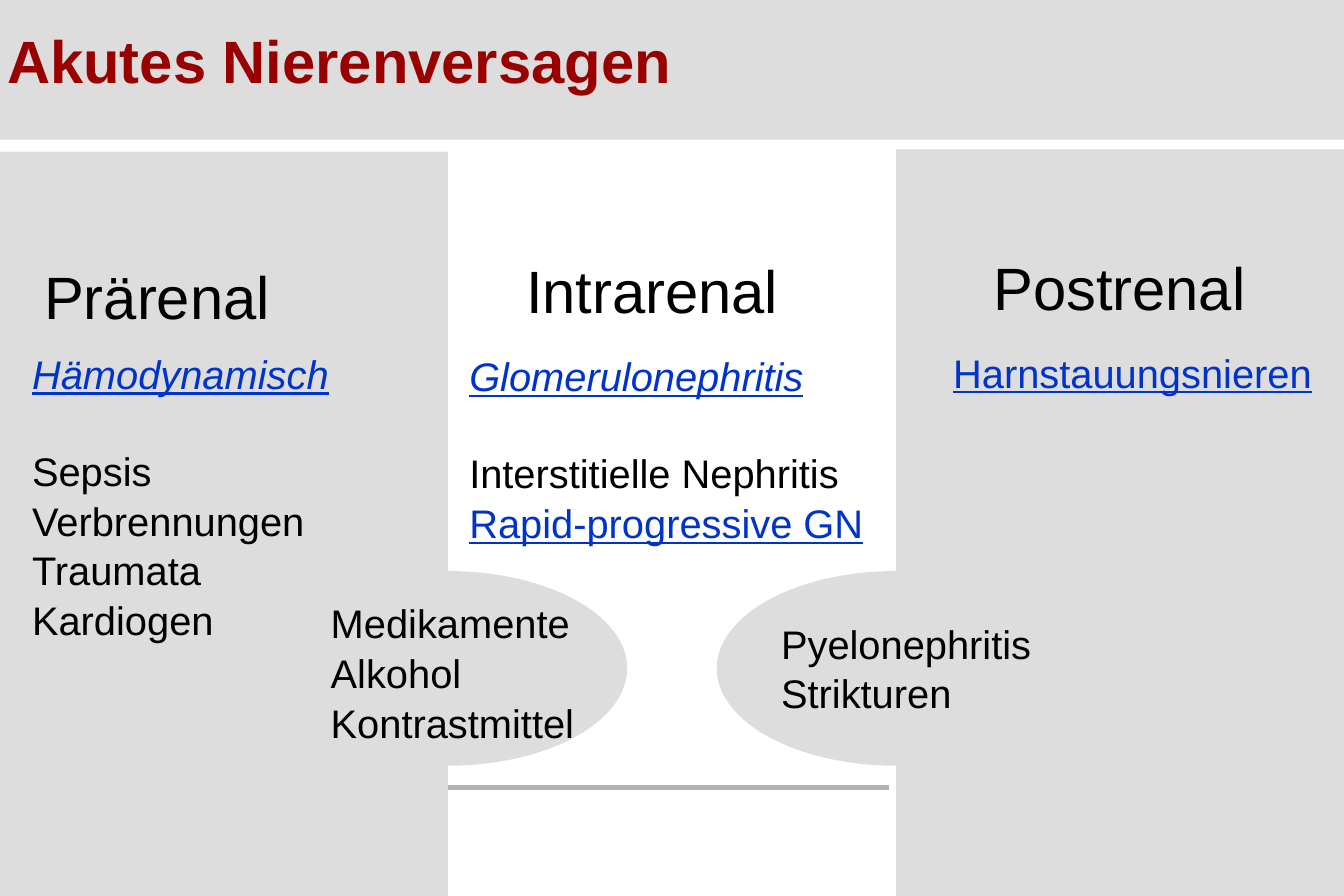
from pptx import Presentation
from pptx.dml.color import RGBColor
from pptx.enum import shapes, text
from pptx.oxml.ns import qn
from pptx.util import Inches, Pt

GREY = RGBColor(0xDD, 0xDD, 0xDD)
RULE_GREY = RGBColor(0xB2, 0xB2, 0xB2)
RED = RGBColor(0x99, 0x00, 0x00)
BLUE = RGBColor(0x00, 0x33, 0xCC)
BLACK = RGBColor(0x00, 0x00, 0x00)
FONT = "Arial"
LINE_SPACING = 1.04
BLANK_LINE = 28.7

LINK = dict(color=BLUE, underline=True)
GAP = dict(space_before=BLANK_LINE)


def format_text(paragraph, wording, size=24, color=BLACK, bold=False, italic=False,
                underline=False, align=text.PP_ALIGN.LEFT, space_before=0):
    paragraph.text = wording
    paragraph.alignment = align
    paragraph.line_spacing = LINE_SPACING
    paragraph.space_before = Pt(space_before)
    font = paragraph.runs[0].font
    font.name, font.size, font.color.rgb = FONT, Pt(size), color
    font.bold, font.italic, font.underline = bold, italic, underline


class SlideBuilder:
    def __init__(self, presentation):
        self.slide = presentation.slides.add_slide(presentation.slide_layouts[5])
        self.shapes = self.slide.shapes

    def area(self, kind, left, top, width, height):
        shape = self.shapes.add_shape(kind, Inches(left), Inches(top),
                                      Inches(width), Inches(height))
        shape.shadow.inherit = False
        shape.fill.solid()
        shape.fill.fore_color.rgb = GREY
        shape.line.fill.background()

    def rule(self, left, right, y):
        line = self.shapes.add_connector(shapes.MSO_CONNECTOR.STRAIGHT, Inches(left),
                                         Inches(y), Inches(right), Inches(y))
        line.line.color.rgb = RULE_GREY
        line.line.width = Pt(3)
        properties = line._element.spPr
        properties.append(properties.makeelement(qn("a:effectLst"), {}))

    def title(self, wording):
        """Fill the title placeholder and bring it in front of the header band."""
        title = self.shapes.title
        title.left, title.top = Inches(-0.04), Inches(-0.01)
        title.width, title.height = Inches(9.56), Inches(1)
        title.text_frame.vertical_anchor = text.MSO_ANCHOR.MIDDLE
        format_text(title.text_frame.paragraphs[0], wording, size=36, color=RED, bold=True)
        self.shapes._spTree.append(title._element)

    def text_box(self, left, top, width, height, lines):
        """Add one paragraph for each (wording, format) pair."""
        box = self.shapes.add_textbox(Inches(left), Inches(top), Inches(width), Inches(height))
        frame = box.text_frame
        frame.word_wrap = True
        for number, (wording, style) in enumerate(lines):
            paragraph = frame.add_paragraph() if number else frame.paragraphs[0]
            format_text(paragraph, wording, **style)

    def heading(self, left, top, width, wording):
        style = dict(size=36, align=text.PP_ALIGN.CENTER)
        self.text_box(left, top, width, 0.7, [(wording, style)])


def main():
    presentation = Presentation()
    presentation.slide_width, presentation.slide_height = Inches(11.25), Inches(7.5)
    builder = SlideBuilder(presentation)
    rectangle, ellipse = shapes.MSO_SHAPE.RECTANGLE, shapes.MSO_SHAPE.OVAL

    builder.area(rectangle, 0, 0, 11.25, 1.17)
    builder.rule(3.75, 7.44, 6.59)
    builder.area(rectangle, 7.5, 1.25, 3.75, 6.25)
    builder.area(rectangle, 0, 1.27, 3.75, 6.23)
    for left in (2.25, 6):
        builder.area(ellipse, left, 4.78, 3, 1.63)
    builder.title("Akutes Nierenversagen")

    builder.heading(0.21, 2.1, 2.21, "Prärenal")
    builder.heading(4.21, 2.05, 2.5, "Intrarenal")
    builder.heading(8.12, 2.03, 2.5, "Postrenal")

    builder.text_box(0.17, 2.86, 2.9, 2.5, [
        ("Hämodynamisch", dict(LINK, italic=True)),
        ("Sepsis", GAP),
        ("Verbrennungen", {}),
        ("Traumata", {}),
        ("Kardiogen", {}),
    ])
    builder.text_box(3.83, 2.88, 3.6, 1.72, [
        ("Glomerulonephritis", dict(LINK, italic=True)),
        ("Interstitielle Nephritis", GAP),
        ("Rapid-progressive GN", LINK),
    ])
    builder.text_box(7.88, 2.85, 3.3, 0.5, [("Harnstauungsnieren", LINK)])
    builder.text_box(2.67, 4.95, 2.4, 1.3, [
        (wording, {}) for wording in ("Medikamente", "Alkohol", "Kontrastmittel")])
    builder.text_box(6.44, 5.12, 2.4, 0.9, [
        (wording, {}) for wording in ("Pyelonephritis", "Strikturen")])

    presentation.save("out.pptx")


if __name__ == "__main__":
    main()
